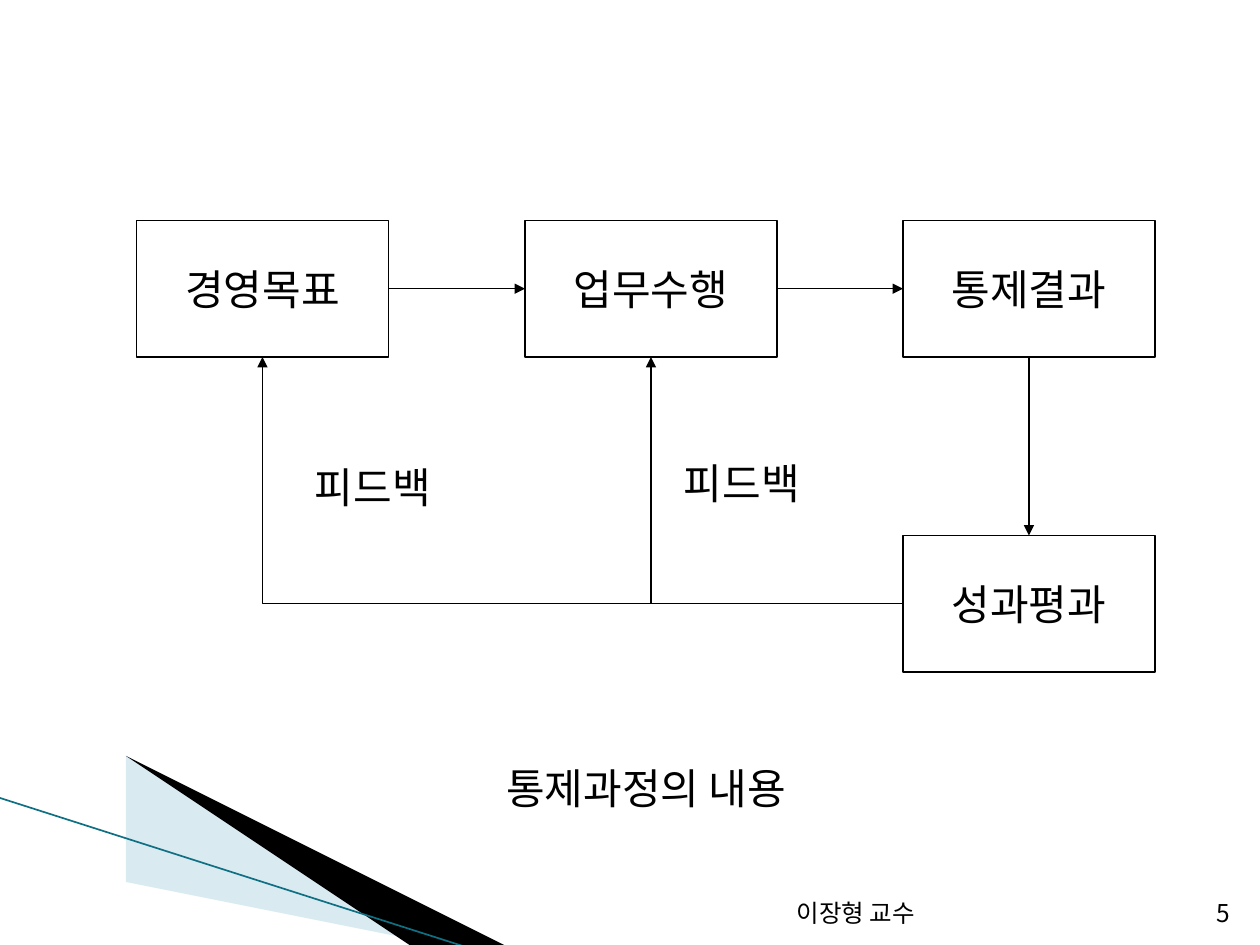
from lxml import etree
from pptx import Presentation, util as u
from pptx.dml.color import RGBColor
from pptx.enum import shapes, text
from pptx.oxml.ns import qn

FONT = "Noto Sans CJK KR"
BLACK, WHITE = "000000", "FFFFFF"
UNIT = u.Inches(1 / 12)  # the diagram sits on a grid of twelfths of an inch
TOP, LEFT, BOTTOM, RIGHT = range(4)  # connection sites of a rectangle


def color(value):
    return RGBColor.from_string(value)


def write(shape, words, size, align, anchor, wrap=False):
    frame = shape.text_frame
    frame.word_wrap = wrap
    frame.vertical_anchor = anchor
    paragraph = frame.paragraphs[0]
    paragraph.text = words
    paragraph.alignment = align
    paragraph.font.size = u.Pt(size)
    paragraph.font.name = FONT
    paragraph.font.color.rgb = color(BLACK)
    for run in paragraph.runs:
        east_asian = etree.SubElement(run._r.get_or_add_rPr(), qn("a:ea"))
        east_asian.set("typeface", FONT)


prs = Presentation()
prs.slide_width, prs.slide_height = u.Inches(10), u.Inches(7.5)
slide = prs.slides.add_slide(prs.slide_layouts[6])
items = slide.shapes

# Corner decoration: two wedges and an edge line
wedges = [
    ("A0CBDC", 40, [(0.55, 6.51), (5.95, 7.51), (4.56, 7.51), (0.55, 6.5)]),
    (BLACK, 100, [(0.53, 6.49), (4.57, 7.51), (3.72, 7.52), (0.54, 6.5)]),
]
for fill, opacity, points in wedges:
    builder = items.build_freeform(*points[0], scale=u.Inches(1))
    builder.add_line_segments(points[1:], close=True)
    wedge = builder.convert_to_shape()
    wedge.shadow.inherit = False
    wedge.fill.solid()
    wedge.fill.fore_color.rgb = color(fill)
    wedge.line.fill.background()
    if opacity < 100:
        tint = wedge._element.spPr.find(".//" + qn("a:srgbClr"))
        etree.SubElement(tint, qn("a:alpha")).set("val", str(opacity * 1000))

edge = items.add_connector(
    shapes.MSO_CONNECTOR.STRAIGHT,
    u.Inches(-0.01), u.Inches(6.33), u.Inches(3.71), u.Inches(7.52))
edge.line.color.rgb = color("0F6F83")
edge.line.width = u.Pt(0.95)
etree.SubElement(edge._element.spPr, qn("a:effectLst"))

# Steps of the control process: column and row on the grid
steps = {}
for name, column, row in [("경영목표", 13, 21), ("성과평과", 86, 51),
                          ("업무수행", 50, 21), ("통제결과", 86, 21)]:
    step = items.add_shape(shapes.MSO_SHAPE.RECTANGLE, column * UNIT,
                           row * UNIT, 24 * UNIT, 13 * UNIT)
    step.shadow.inherit = False
    step.fill.solid()
    step.fill.fore_color.rgb = color(WHITE)
    step.line.color.rgb = color(BLACK)
    step.line.width = u.Pt(0.75)
    write(step, name, 24, text.PP_ALIGN.CENTER, text.MSO_ANCHOR.MIDDLE)
    steps[name] = step

flows = [
    ("경영목표", RIGHT, "업무수행", LEFT),
    ("업무수행", RIGHT, "통제결과", LEFT),
    ("통제결과", BOTTOM, "성과평과", TOP),
    ("성과평과", LEFT, "경영목표", BOTTOM),
    ("성과평과", LEFT, "업무수행", BOTTOM),
]
for start, start_site, end, end_site in flows:
    feedback = start_site == LEFT
    kind = shapes.MSO_CONNECTOR.ELBOW if feedback else shapes.MSO_CONNECTOR.STRAIGHT
    flow = items.add_connector(kind, 0, 0, 0, 0)
    flow.begin_connect(steps[start], start_site)
    flow.end_connect(steps[end], end_site)
    flow.line.color.rgb = color(BLACK)
    flow.line.width = u.Pt(0.75)
    etree.SubElement(flow.line._get_or_add_ln(), qn("a:tailEnd")).set("type", "triangle")
    properties = flow._element.spPr
    etree.SubElement(properties, qn("a:effectLst"))
    if feedback:  # one bend only, turned half round
        properties.find(qn("a:prstGeom")).set("prst", "bentConnector2")
        frame = properties.find(qn("a:xfrm"))
        for flip in ("flipH", "flipV"):
            frame.attrib.pop(flip, None)
        frame.set("rot", "10800000")

# Labels, caption and footer
left, right = text.PP_ALIGN.LEFT, text.PP_ALIGN.RIGHT
top, bottom = text.MSO_ANCHOR.TOP, text.MSO_ANCHOR.BOTTOM
for words, x, y, width, height, size, align, anchor in [
    ("피드백", 2.4, 3.61, 1.2, 0.5, 24, left, top),
    ("피드백", 5.33, 3.58, 1.2, 0.5, 24, left, top),
    ("통제과정의 내용", 3.92, 6, 2.65, 0.5, 24, left, top),
    ("이장형 교수", 4.79, 7.01, 2.57, 0.4, 14, right, bottom),
    ("5", 9.46, 7.01, 0.4, 0.4, 14, right, bottom),
]:
    label = items.add_textbox(*map(u.Inches, (x, y, width, height)))
    write(label, words, size, align, anchor, wrap=anchor == bottom)

prs.save("out.pptx")
